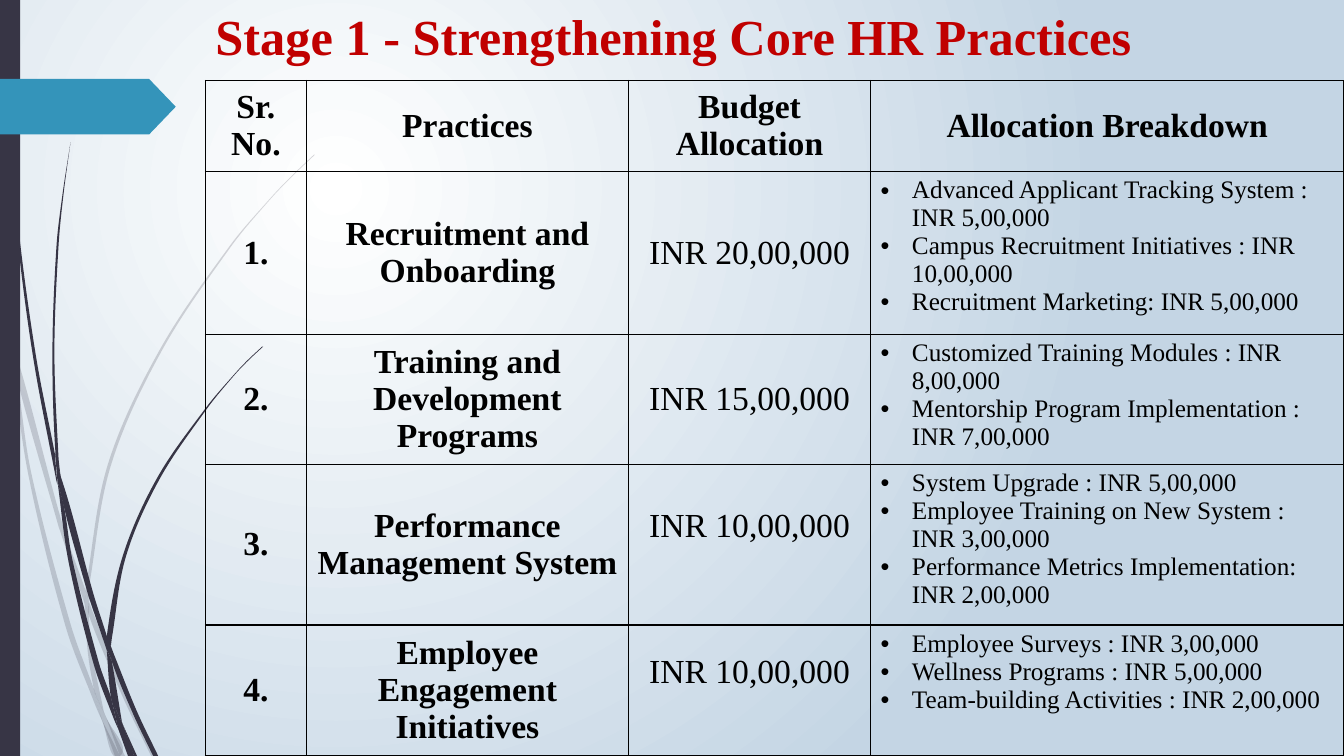
from math import hypot

from lxml.etree import Element, SubElement
from pptx import Presentation
from pptx.dml.color import RGBColor
from pptx.enum.shapes import MSO_SHAPE
from pptx.enum.text import MSO_ANCHOR, PP_ALIGN
from pptx.oxml.ns import qn
from pptx.util import Cm, Pt

COLORS = {"white": "FFFFFF", "mist": "C4D5E4", "ink": "373545",
          "teal": "3494BA", "red": "C00000", "black": "000000"}
FONT = "Times New Roman"
UNIT = Cm(2.54)  # one unit of the blade coordinates

# Each blade of grass: points along one edge, points back along the other
PALE_BLADES = [
    ([(0.11, 3.5), (0.09, 3.22), (0, 2.82)], [(0, 2.99), (0.1, 3.44)]),
    ([(0.58, 5.22), (0.84, 5.99)],
     [(0.85, 5.86), (0.62, 5.2), (0.14, 3.45), (0.17, 3.76), (0.58, 5.22)]),
    ([(0.88, 5.96), (0.88, 6.1), (1.23, 6.94), (1.5, 7.5)], [(1.55, 7.5), (1.27, 6.92), (0.92, 6.07)]),
    ([(1.19, 7.5), (1.24, 7.5)], [(1.05, 7.11)]),
    ([(0.93, 6.83), (0.7, 6.19), (0.31, 4.69), (0.17, 3.76), (0.11, 3.5)],
     [(0.11, 3.5), (0.28, 4.7), (0.65, 6.21), (0.92, 6.93), (1.01, 7.14), (0.99, 7.07)]),
    ([(0.84, 5.99), (0.87, 6.46), (0.93, 6.83), (0.96, 6.92), (1.05, 7.11)],
     [(1.03, 7.06), (0.91, 6.46), (0.88, 6.1), (0.88, 6.08)]),
    ([(0.88, 5.84), (1.1, 4.62), (1.6, 3.49), (2.29, 2.45), (2.68, 1.98), (2.9, 1.75), (3.12, 1.54)],
     [(3.12, 1.53), (2.89, 1.75), (2.68, 1.97), (2.28, 2.44), (1.58, 3.48), (1.07, 4.61),
      (0.85, 5.84), (0.85, 5.86), (0.88, 5.96)]),
    ([(1.01, 7.14), (1.14, 7.5)], [(1.19, 7.5), (1.01, 7.14)]),
    ([(0.88, 6.08), (0.88, 6.1), (0.88, 5.96)], [(0.85, 5.86), (0.84, 5.99)]),
    ([(0.96, 6.92), (0.93, 6.83)], [(0.99, 7.07), (1.01, 7.14), (1.19, 7.5), (1.05, 7.11)]),
]
DARK_BLADES = [
    ([(0.07, 1.1), (0.17, 2.33), (0.33, 3.55), (0.56, 4.77), (0.57, 4.81)],
     [(0.55, 4.57), (0.55, 4.53), (0.36, 3.55), (0.19, 2.32), (0.08, 1.09), (0.05, 0.48),
      (0.04, 0), (0.03, 0), (0.04, 0.48)]),
    ([(0.88, 5.92), (1.06, 6.45)],
     [(1.06, 6.33), (1.06, 6.31), (0.93, 5.9), (0.6, 4.72), (0.64, 5.05), (0.88, 5.92)]),
    ([(1.1, 6.41), (1.11, 6.56), (1.32, 7.08), (1.52, 7.5)], [(1.57, 7.5), (1.36, 7.06), (1.13, 6.49)]),
    ([(1.1, 6.91), (0.98, 6.57), (0.72, 5.56), (0.64, 5.05), (0.57, 4.77)],
     [(0.57, 4.77), (0.68, 5.57), (0.93, 6.59), (1.11, 7.08), (1.17, 7.22), (1.16, 7.17)]),
    ([(0.6, 4.72), (0.58, 4.53), (0.54, 3.49), (0.58, 2.45), (0.63, 1.93), (0.7, 1.41)],
     [(0.7, 1.41), (0.62, 1.93), (0.56, 2.45), (0.52, 3.49), (0.55, 4.49), (0.6, 4.72)]),
    ([(1.33, 7.5), (1.36, 7.5)], [(1.22, 7.19)]),
    ([(0.57, 4.77), (0.64, 5.05)], [(0.6, 4.72), (0.55, 4.49), (0.55, 4.53)]),
    ([(1.11, 6.33), (1.25, 5.52), (1.58, 4.76), (2.05, 4.06), (2.31, 3.74), (2.45, 3.59), (2.61, 3.44)],
     [(2.6, 3.44), (2.45, 3.58), (2.31, 3.73), (2.04, 4.05), (1.56, 4.74), (1.22, 5.51),
      (1.06, 6.31), (1.1, 6.41)]),
    ([(1.17, 7.22), (1.27, 7.5)], [(1.31, 7.5), (1.17, 7.22)]),
    ([(1.06, 6.45), (1.1, 6.91), (1.16, 7.06), (1.22, 7.19)], [(1.21, 7.16), (1.11, 6.56), (1.09, 6.51)]),
    ([(1.06, 6.45), (1.09, 6.51), (1.11, 6.56)], [(1.1, 6.41), (1.06, 6.31), (1.06, 6.33)]),
    ([(1.16, 7.06), (1.1, 6.91)], [(1.16, 7.17), (1.17, 7.22), (1.3, 7.5), (1.33, 7.5), (1.22, 7.19)]),
]

HEADERS = ["Sr. No.", "Practices", "Budget Allocation", "Allocation Breakdown"]
PRACTICES = [
    ("Recruitment and Onboarding", "INR 20,00,000",
     ["Advanced Applicant Tracking System : INR 5,00,000",
      "Campus Recruitment Initiatives : INR 10,00,000",
      "Recruitment Marketing: INR 5,00,000"]),
    ("Training and Development Programs", "INR 15,00,000",
     ["Customized Training Modules : INR 8,00,000",
      "Mentorship Program Implementation : INR 7,00,000"]),
    ("Performance Management System", "INR 10,00,000",
     ["System Upgrade : INR 5,00,000",
      "Employee Training on New System : INR 3,00,000",
      "Performance Metrics Implementation: INR 2,00,000"]),
    ("Employee Engagement Initiatives", "INR 10,00,000",
     ["Employee Surveys : INR 3,00,000",
      "Wellness Programs : INR 5,00,000",
      "Team-building Activities : INR 2,00,000"]),
]
COL_WIDTHS = [2.54, 8.12, 6.1, 11.93]
ROW_HEIGHTS = [2.29, 4.1, 3.28, 4.05, 3.3]
RAISED_ROWS = (3, 4)  # budget sits above the middle here


def rgb(name):
    return RGBColor.from_string(COLORS[name])


def paint_background(s):
    fill = s.background.fill
    fill.gradient()
    for stop, name in zip(fill.gradient_stops, ("white", "mist")):
        stop.color.rgb = rgb(name)
    grad = s.element.find(".//" + qn("a:gradFill"))
    grad.remove(grad.find(qn("a:lin")))
    circle = SubElement(grad, qn("a:path"), path="circle")
    SubElement(circle, qn("a:fillToRect"), l="50000", t="50000", r="100000", b="100000")


def paint(sp, color, alpha=None):
    sp.shadow.inherit = False
    sp.fill.solid()
    sp.fill.fore_color.rgb = rgb(color)
    sp.line.fill.background()
    if alpha:
        clr = sp.element.spPr.find(".//" + qn("a:srgbClr"))
        SubElement(clr, qn("a:alpha"), val=str(alpha * 1000))


def handle(at, start, end, length):
    """Control point at the given length from a point, parallel to start-end."""
    dx, dy = end[0] - start[0], end[1] - start[1]
    k = length / (hypot(dx, dy) or 1)
    return at[0] + dx * k, at[1] + dy * k


def bend(sp, corner):
    """Turn the straight segments into curves, except the one at the corner."""
    pts = [(int(e.get("x")), int(e.get("y"))) for e in sp.element.iter(qn("a:pt"))]
    for i, line in enumerate(list(sp.element.iter(qn("a:lnTo"))), 1):
        if i == corner:
            continue
        b, c = pts[i - 1], pts[i]
        a = b if i - 1 in (0, corner) else pts[i - 2]
        d = c if i + 1 in (corner, len(pts)) else pts[i + 1]
        third = hypot(c[0] - b[0], c[1] - b[1]) / 3
        curve = Element(qn("a:cubicBezTo"))
        for x, y in (handle(b, a, c, third), handle(c, d, b, third), c):
            SubElement(curve, qn("a:pt"), x=str(round(x)), y=str(round(y)))
        line.getparent().replace(line, curve)


def add_blade(s, out, back, alpha=None):
    pts = [(round(x * UNIT), round(y * UNIT)) for x, y in out + back]
    builder = s.shapes.build_freeform(*pts[0])
    builder.add_line_segments(pts[1:], close=True)
    sp = builder.convert_to_shape()
    bend(sp, len(out))
    paint(sp, "ink", alpha)


def add_block(s, kind, color, left, top, width, height):
    sp = s.shapes.add_shape(kind, Cm(left), Cm(top), Cm(width), Cm(height))
    paint(sp, color)
    return sp


def format_runs(p, size, color, bold):
    for r in p.runs:
        r.font.name, r.font.size, r.font.bold = FONT, Pt(size), bold
        r.font.color.rgb = rgb(color)


def add_title(s, text):
    tf = s.shapes.add_textbox(Cm(5.18), Cm(0), Cm(24.69), Cm(1.8)).text_frame
    tf.word_wrap = True
    tf.text = text
    format_runs(tf.paragraphs[0], 36, "red", True)


def style_cell(cell):
    tcPr = cell._tc.get_or_add_tcPr()
    for side in ("lnL", "lnR", "lnT", "lnB"):
        ln = SubElement(tcPr, qn("a:" + side), w=str(Pt(1)))
        SubElement(SubElement(ln, qn("a:solidFill")), qn("a:srgbClr"), val=COLORS["black"])
    cell.fill.background()


def fill_centred(cell, text, bold=True):
    style_cell(cell)
    cell.text_frame.text = text
    cell.vertical_anchor = MSO_ANCHOR.MIDDLE
    p = cell.text_frame.paragraphs[0]
    p.alignment = PP_ALIGN.CENTER
    format_runs(p, 24, "black", bold)


def fill_bullets(cell, items):
    style_cell(cell)
    cell.text_frame.text = "\n".join(items)
    for p in cell.text_frame.paragraphs:
        pPr = p._p.get_or_add_pPr()
        pPr.set("marL", str(Cm(0.79)))
        pPr.set("indent", str(-Cm(0.79)))
        SubElement(pPr, qn("a:buFont"), typeface="Arial")
        SubElement(pPr, qn("a:buChar"), char="•")
        format_runs(p, 18, "black", False)


def add_budget_table(s):
    table = s.shapes.add_table(len(ROW_HEIGHTS), len(COL_WIDTHS), Cm(5.18), Cm(2.03),
                               Cm(sum(COL_WIDTHS)), Cm(sum(ROW_HEIGHTS))).table
    table.first_row = table.horz_banding = False
    for col, width in zip(table.columns, COL_WIDTHS):
        col.width = Cm(width)
    for row, height in zip(table.rows, ROW_HEIGHTS):
        row.height = Cm(height)
    for i, header in enumerate(HEADERS):
        fill_centred(table.cell(0, i), header)
    for n, (practice, budget, items) in enumerate(PRACTICES, 1):
        fill_centred(table.cell(n, 0), f"{n}.")
        fill_centred(table.cell(n, 1), practice)
        fill_centred(table.cell(n, 2), budget, bold=False)
        fill_bullets(table.cell(n, 3), items)
        if n in RAISED_ROWS:
            table.cell(n, 2).margin_bottom = Cm(1.07)


def main():
    prs = Presentation()
    prs.slide_width, prs.slide_height = Cm(33.87), Cm(19.05)
    s = prs.slides.add_slide(prs.slide_layouts[6])
    paint_background(s)
    # Grass, side bar and arrow tab
    for blades, alpha in ((PALE_BLADES, 20), (DARK_BLADES, None)):
        for out, back in blades:
            add_blade(s, out, back, alpha)
    add_block(s, MSO_SHAPE.RECTANGLE, "ink", 0, 0, 0.51, 19.05)
    tab = add_block(s, MSO_SHAPE.PENTAGON, "teal", 0, 1.99, 4.43, 1.4)
    tab.adjustments[0] = 0.48
    # Content
    add_budget_table(s)
    add_title(s, "Stage 1 - Strengthening Core HR Practices")
    prs.save("out.pptx")


if __name__ == "__main__":
    main()
